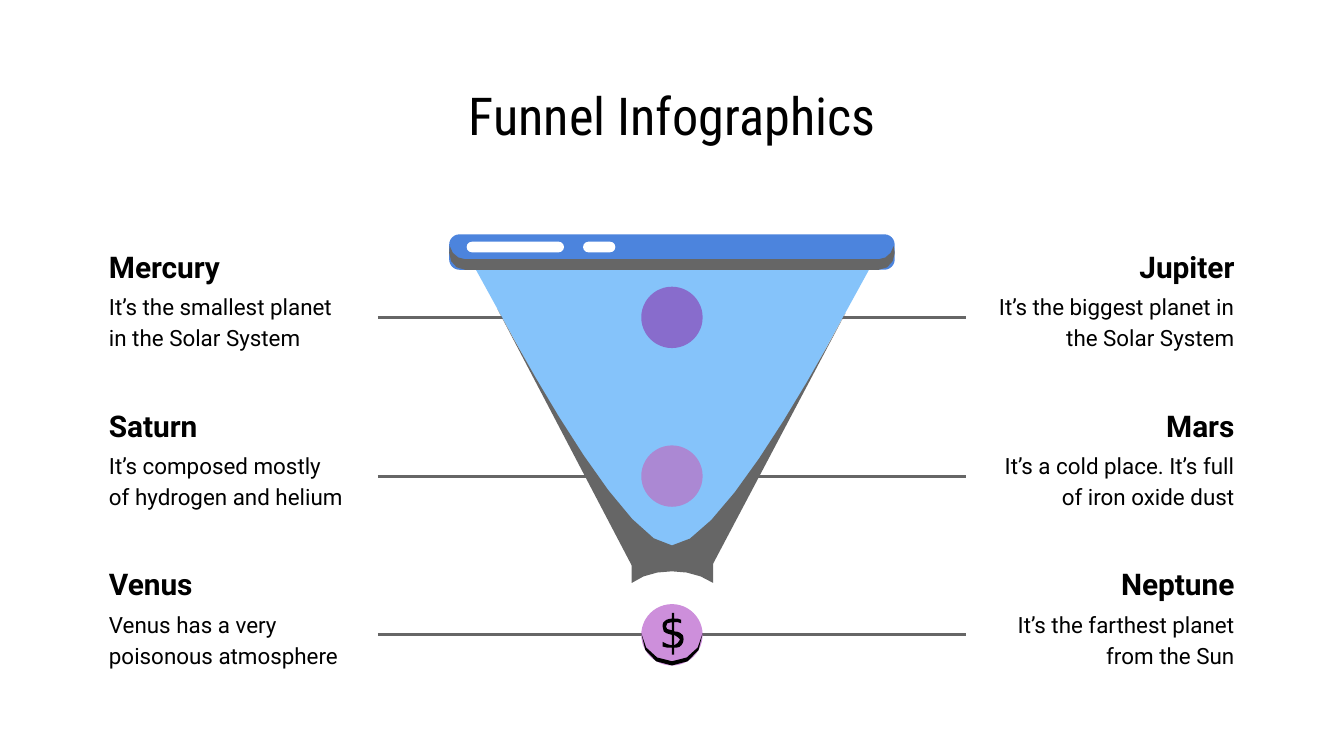
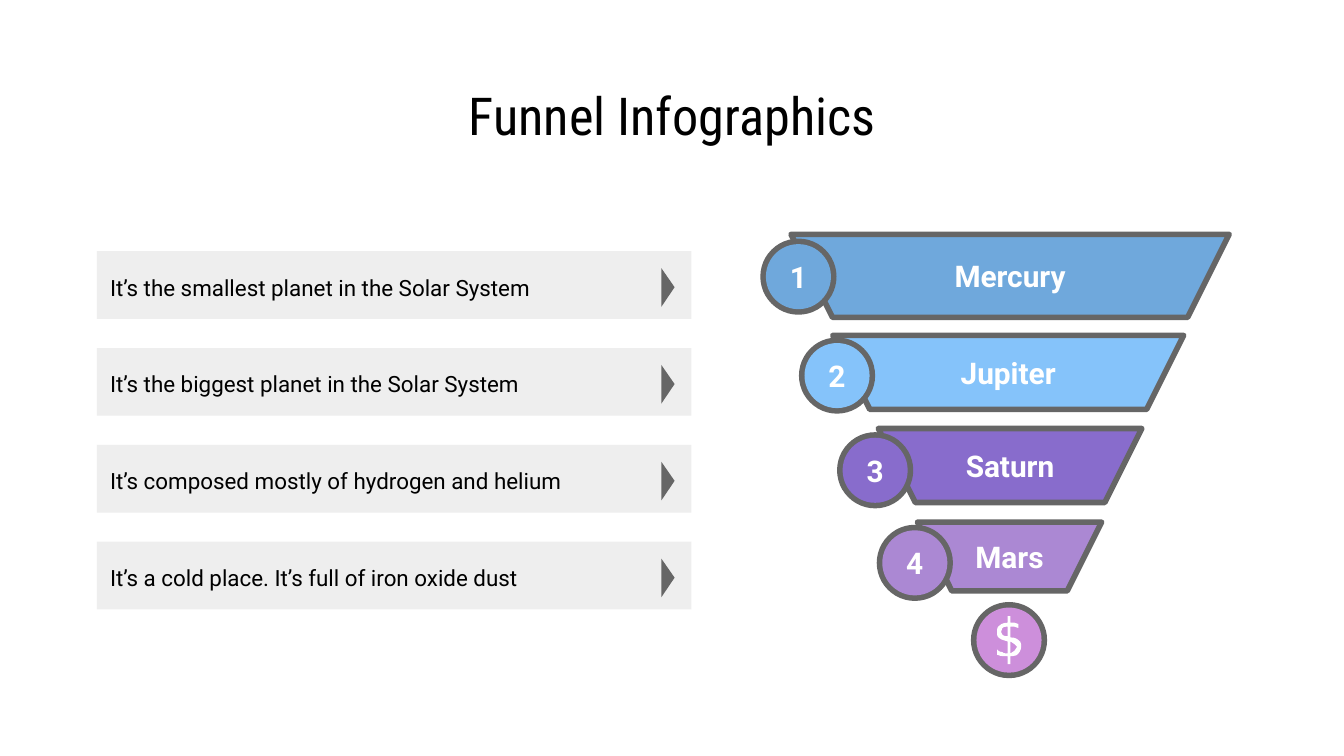
from math import ceil, dist
from typing import NamedTuple, Optional

from lxml.etree import SubElement
from pptx import Presentation
from pptx.dml.color import RGBColor
from pptx.enum.shapes import MSO_CONNECTOR as Connector, MSO_SHAPE as Preset
from pptx.enum.text import MSO_ANCHOR as Anchor, PP_ALIGN as Align
from pptx.oxml.ns import qn
from pptx.shapes.autoshape import Shape
from pptx.slide import Slide
from pptx.util import Cm, Pt

BLACK = RGBColor(0x00, 0x00, 0x00)
WHITE = RGBColor(0xFF, 0xFF, 0xFF)
GREY = RGBColor(0x66, 0x66, 0x66)
LIGHT_GREY = RGBColor(0xEE, 0xEE, 0xEE)
ROYAL_BLUE = RGBColor(0x4C, 0x84, 0xDD)
STEEL_BLUE = RGBColor(0x6F, 0xA8, 0xDC)
SKY_BLUE = RGBColor(0x85, 0xC3, 0xFA)
VIOLET = RGBColor(0x88, 0x6C, 0xCC)
LILAC = RGBColor(0xAB, 0x88, 0xD3)
PINK = RGBColor(0xCD, 0x8F, 0xDB)

TITLE = "Funnel Infographics"
TITLE_FONT = {"name": "Roboto Condensed", "size": Pt(28), "bold": False}
HEADING_FONT = {"name": "Roboto", "size": Pt(16), "bold": True}
BODY_FONT = {"name": "Roboto", "size": Pt(12), "bold": False}
INSET = 0.25

Contour = tuple[tuple[float, ...], ...]


class Box(NamedTuple):
    left: float
    top: float
    width: float
    height: float


class Planet(NamedTuple):
    name: str
    fact: str


class Level(NamedTuple):
    planet: Planet
    fill: RGBColor
    box: Box
    badge_x: float
    badge_y: float


class Outline(NamedTuple):
    fill: RGBColor
    contour: Contour


MERCURY = Planet("Mercury", "It’s the smallest planet in the Solar System")
JUPITER = Planet("Jupiter", "It’s the biggest planet in the Solar System")
SATURN = Planet("Saturn", "It’s composed mostly of hydrogen and helium")
MARS = Planet("Mars", "It’s a cold place. It’s full of iron oxide dust")
VENUS = Planet("Venus", "Venus has a very poisonous atmosphere")
NEPTUNE = Planet("Neptune", "It’s the farthest planet from the Sun")

PLANET_ROWS = ((MERCURY, JUPITER), (SATURN, MARS), (VENUS, NEPTUNE))
FIRST_LINE_Y = 6.0
ROW_PITCH = 3.0
MIDDLE_X = 12.7
DOT_SIZE = 1.16

LEVELS = (
    Level(MERCURY, STEEL_BLUE, Box(14.95, 4.43, 8.28, 1.57), 15.09, 5.23),
    Level(JUPITER, SKY_BLUE, Box(15.74, 6.34, 6.63, 1.4), 15.82, 7.1),
    Level(SATURN, VIOLET, Box(16.6, 8.1, 4.98, 1.4), 16.54, 8.89),
    Level(MARS, LILAC, Box(17.34, 9.87, 3.48, 1.3), 17.29, 10.64),
)
CARD_PITCH = 1.83

# A contour lists points; six numbers stand for a cubic curve.
FUNNEL_WALL = Outline(SKY_BLUE, (
    (8.82, 4.78), (11.94, 10.46), (13.48, 10.46), (16.6, 4.78)))
FUNNEL_NECK = Outline(GREY, (
    (11.94, 10.46), (11.94, 11.02), (12.14, 10.87, 12.42, 10.8, 12.7, 10.8),
    (12.98, 10.8, 13.26, 10.87, 13.48, 11.02), (13.48, 10.46)))
FUNNEL_SHADE = Outline(GREY, (
    (9.4, 5.84), (11.94, 10.69), (13.46, 10.69), (15.98, 5.92),
    (15.19, 7.39, 13.51, 10.31, 12.7, 10.31),
    (11.89, 10.31, 10.16, 7.26, 9.4, 5.84)))
RIM_SHADE = Outline(GREY, (
    (8.5, 4.65), (8.49, 4.78), (8.49, 4.95, 8.61, 5.1, 8.79, 5.1),
    (16.61, 5.1), (16.79, 5.1, 16.91, 4.95, 16.91, 4.78), (16.89, 4.65),
    (16.86, 4.8, 16.74, 4.9, 16.61, 4.9), (8.79, 4.9),
    (8.66, 4.9, 8.53, 4.8, 8.5, 4.65)))
COIN_EDGE = Outline(BLACK, (
    (12.12, 11.97), (12.12, 12.33, 12.37, 12.58, 12.7, 12.58),
    (13.03, 12.58, 13.28, 12.33, 13.28, 11.97),
    (13.26, 12.27, 13, 12.5, 12.7, 12.5),
    (12.4, 12.5, 12.14, 12.27, 12.12, 11.97)))

DOLLAR_WIDTH, DOLLAR_HEIGHT = 18, 36
DOLLAR = (
    ((8, 8), (8, 15), (6, 15, 5, 15, 4, 14), (3, 14, 3, 13, 3, 12),
     (3, 10, 4, 9, 4, 9), (5, 8, 6, 8, 8, 8)),
    ((10, 19), (11, 20, 13, 20, 13, 21), (14, 21, 15, 22, 15, 23),
     (15, 25, 14, 26, 13, 26), (13, 27, 11, 27, 10, 28)),
    ((8, 0), (8, 5), (5, 5, 3, 6, 2, 7), (0, 8, 0, 10, 0, 12),
     (0, 14, 0, 15, 1, 16), (3, 18, 5, 18, 8, 19), (8, 28),
     (6, 28, 5, 28, 4, 27), (2, 27, 1, 26, 0, 25), (0, 29),
     (1, 29, 2, 30, 4, 30), (5, 30, 6, 30, 8, 30), (8, 36), (10, 36),
     (10, 30), (12, 30, 15, 30, 16, 28), (17, 27, 18, 25, 18, 23),
     (18, 21, 18, 19, 16, 18), (15, 17, 13, 16, 10, 16), (10, 8),
     (11, 8, 12, 8, 13, 8), (14, 8, 15, 9, 16, 9), (16, 6),
     (15, 6, 14, 5, 13, 5), (12, 5, 11, 5, 10, 5), (10, 0)),
)


def write_text(shape: Shape, text: str, font: dict, color: RGBColor = BLACK,
               align: Align = Align.LEFT, anchor: Anchor = Anchor.MIDDLE,
               inset: float = INSET, spacing: float = 1.0) -> None:
    frame = shape.text_frame
    margins = {f"margin_{side}": Cm(inset) for side in ("left", "top", "right", "bottom")}
    for name, value in {"word_wrap": True, "vertical_anchor": anchor, **margins}.items():
        setattr(frame, name, value)
    paragraph = frame.paragraphs[0]
    paragraph.alignment = align
    paragraph.line_spacing = spacing
    run = paragraph.add_run()
    run.text = text
    for name, value in font.items():
        setattr(run.font, name, value)
    run.font.color.rgb = color


def add_text(slide: Slide, box: Box, text: str, font: dict, **layout) -> None:
    write_text(slide.shapes.add_textbox(*map(Cm, box)), text, font, **layout)


def paint(shape: Shape, fill: RGBColor, border: Optional[RGBColor] = None) -> Shape:
    shape.shadow.inherit = False
    shape.fill.solid()
    shape.fill.fore_color.rgb = fill
    if border is None:
        shape.line.fill.background()
    else:
        shape.line.color.rgb = border
        shape.line.width = Pt(3)
        SubElement(shape._element.spPr.find(qn("a:ln")), qn("a:round"))
    return shape


def add_preset(slide: Slide, preset: Preset, box: Box, fill: RGBColor) -> Shape:
    return paint(slide.shapes.add_shape(preset, *map(Cm, box)), fill)


def add_pill(slide: Slide, box: Box, fill: RGBColor, rounding: float) -> None:
    add_preset(slide, Preset.ROUNDED_RECTANGLE, box, fill).adjustments[0] = rounding


def add_circle(slide: Slide, x: float, y: float, size: float, fill: RGBColor) -> Shape:
    return add_preset(slide, Preset.OVAL, Box(x - size / 2, y - size / 2, size, size), fill)


def flatten(contour: Contour, unit: float) -> list[tuple[float, float]]:
    """Turn the curves of a contour into straight steps, more for a longer curve."""
    points = [contour[0]]
    for segment in contour[1:]:
        if len(segment) == 2:
            points.append(segment)
            continue
        x0, y0 = points[-1]
        x1, y1, x2, y2, x3, y3 = segment
        length = unit * dist((x0, y0), (x3, y3))
        steps = 1 if length < 0.1 else 2 + ceil(length)
        for step in range(1, steps + 1):
            t = step / steps
            a, b, c, d = (1 - t) ** 3, 3 * t * (1 - t) ** 2, 3 * t * t * (1 - t), t ** 3
            points.append((a * x0 + b * x1 + c * x2 + d * x3,
                           a * y0 + b * y1 + c * y2 + d * y3))
    return points


def add_outline(slide: Slide, contours: tuple[Contour, ...], fill: RGBColor,
                border: Optional[RGBColor] = None, left: float = 0, top: float = 0,
                unit: float = 1) -> Shape:
    """Draw closed contours whose points count units from left and top."""
    builder = None
    for contour in contours:
        first, *rest = [(Cm(left + unit * x), Cm(top + unit * y))
                        for x, y in flatten(contour, unit)]
        if builder is None:
            builder = slide.shapes.build_freeform(*first)
        else:
            builder.move_to(*first)
        builder.add_line_segments(rest, close=True)
    return paint(builder.convert_to_shape(), fill, border)


def add_dollar(slide: Slide, x: float, y: float, height: float, fill: RGBColor) -> None:
    unit = height / DOLLAR_HEIGHT
    add_outline(slide, DOLLAR, fill, left=x - unit * DOLLAR_WIDTH / 2,
                top=y - height / 2, unit=unit)


def add_rule(slide: Slide, y: float) -> None:
    line = slide.shapes.add_connector(Connector.STRAIGHT, Cm(7.14), Cm(y), Cm(18.25), Cm(y))
    line.line.color.rgb = GREY
    line.line.width = Pt(1.5)
    SubElement(line._element.spPr, qn("a:effectLst"))


def add_planet(slide: Slide, planet: Planet, line_y: float, align: Align) -> None:
    rows = ((planet.name, HEADING_FONT, -1.65, 5.28, 1.32),
            (planet.fact, BODY_FONT, -0.78, 4.98, 1.57))
    for text, font, offset, width, height in rows:
        left = 1.81 if align == Align.LEFT else 23.58 - width
        add_text(slide, Box(left, line_y + offset, width, height), text, font,
                 align=align, anchor=Anchor.TOP, spacing=1.15)


def add_titled_slide(presentation: Presentation) -> Slide:
    slide = presentation.slides.add_slide(presentation.slide_layouts[6])
    add_text(slide, Box(7.93, 1.5, 9.54, 1.35), TITLE, TITLE_FONT, align=Align.CENTER)
    return slide


def build_funnel_slide(slide: Slide) -> None:
    line_ys = [FIRST_LINE_Y + ROW_PITCH * row for row in range(len(PLANET_ROWS))]
    for y, (left_planet, right_planet) in zip(line_ys, PLANET_ROWS):
        add_rule(slide, y)
        add_planet(slide, left_planet, y, Align.LEFT)
        add_planet(slide, right_planet, y, Align.RIGHT)

    for outline in (FUNNEL_WALL, FUNNEL_NECK):
        add_outline(slide, (outline.contour,), outline.fill)
    add_pill(slide, Box(8.49, 4.43, 8.42, 0.67), ROYAL_BLUE, 0.29)
    add_outline(slide, (RIM_SHADE.contour,), RIM_SHADE.fill)
    for left, width in ((8.82, 1.84), (11.02, 0.61)):
        add_pill(slide, Box(left, 4.57, width, 0.2), WHITE, 0.5)
    add_outline(slide, (FUNNEL_SHADE.contour,), FUNNEL_SHADE.fill)

    for y, fill in zip(line_ys, (VIOLET, LILAC, PINK)):
        add_circle(slide, MIDDLE_X, y, DOT_SIZE, fill)
    add_outline(slide, (COIN_EDGE.contour,), COIN_EDGE.fill)
    add_dollar(slide, MIDDLE_X + 0.02, line_ys[-1] - 0.02, 0.79, BLACK)


def add_card(slide: Slide, top: float, fact: str) -> None:
    card = add_preset(slide, Preset.RECTANGLE, Box(1.83, top, 11.24, 1.28), LIGHT_GREY)
    write_text(card, fact, BODY_FONT, spacing=1.15)
    add_outline(slide, (((0, 0), (0, 0.73), (0.25, 0.36)),), GREY, left=12.5, top=top + 0.32)


def add_badge(slide: Slide, x: float, y: float, fill: RGBColor) -> Shape:
    add_circle(slide, x, y, 1.44, GREY)
    return add_circle(slide, x, y, 1.23, fill)


def add_level(slide: Slide, number: int, level: Level) -> None:
    width, height = level.box.width, level.box.height
    slant = height / 2
    contour = ((0, 0), (slant, height), (width - slant, height), (width, 0))
    band = add_outline(slide, (contour,), level.fill, GREY, level.box.left, level.box.top)
    write_text(band, level.planet.name, HEADING_FONT, WHITE, Align.CENTER)
    badge = add_badge(slide, level.badge_x, level.badge_y, level.fill)
    write_text(badge, str(number), HEADING_FONT, WHITE, Align.CENTER, inset=0)


def build_levels_slide(slide: Slide) -> None:
    for index, level in enumerate(LEVELS):
        add_card(slide, 4.75 + CARD_PITCH * index, level.planet.fact)
        add_level(slide, index + 1, level)
    coin_x, coin_y = 19.07, 12.1
    add_badge(slide, coin_x, coin_y, PINK)
    add_dollar(slide, coin_x, coin_y, 0.91, WHITE)


def main() -> None:
    presentation = Presentation()
    presentation.slide_width = Cm(25.4)
    presentation.slide_height = Cm(14.29)
    build_funnel_slide(add_titled_slide(presentation))
    build_levels_slide(add_titled_slide(presentation))
    presentation.save("out.pptx")


if __name__ == "__main__":
    main()
